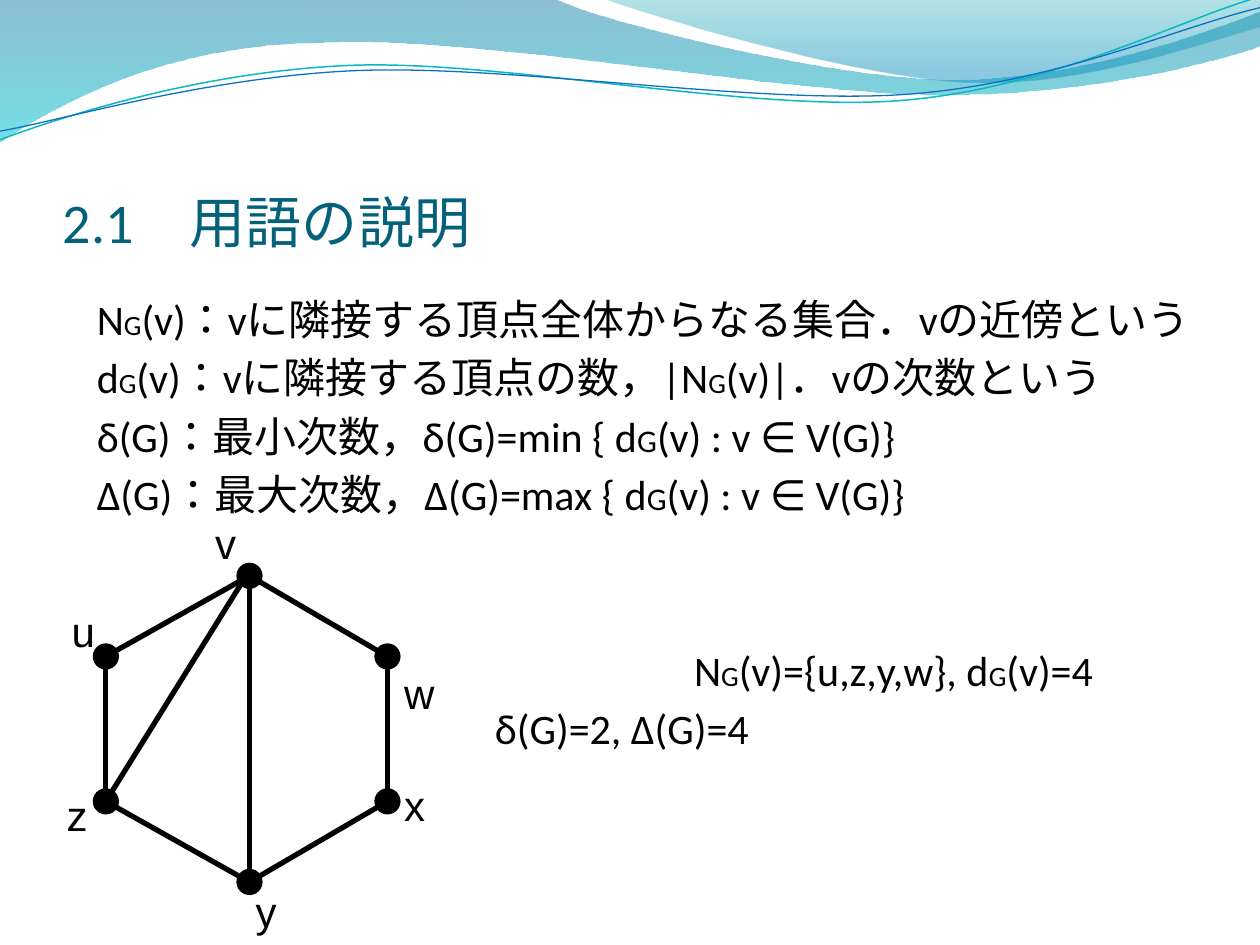
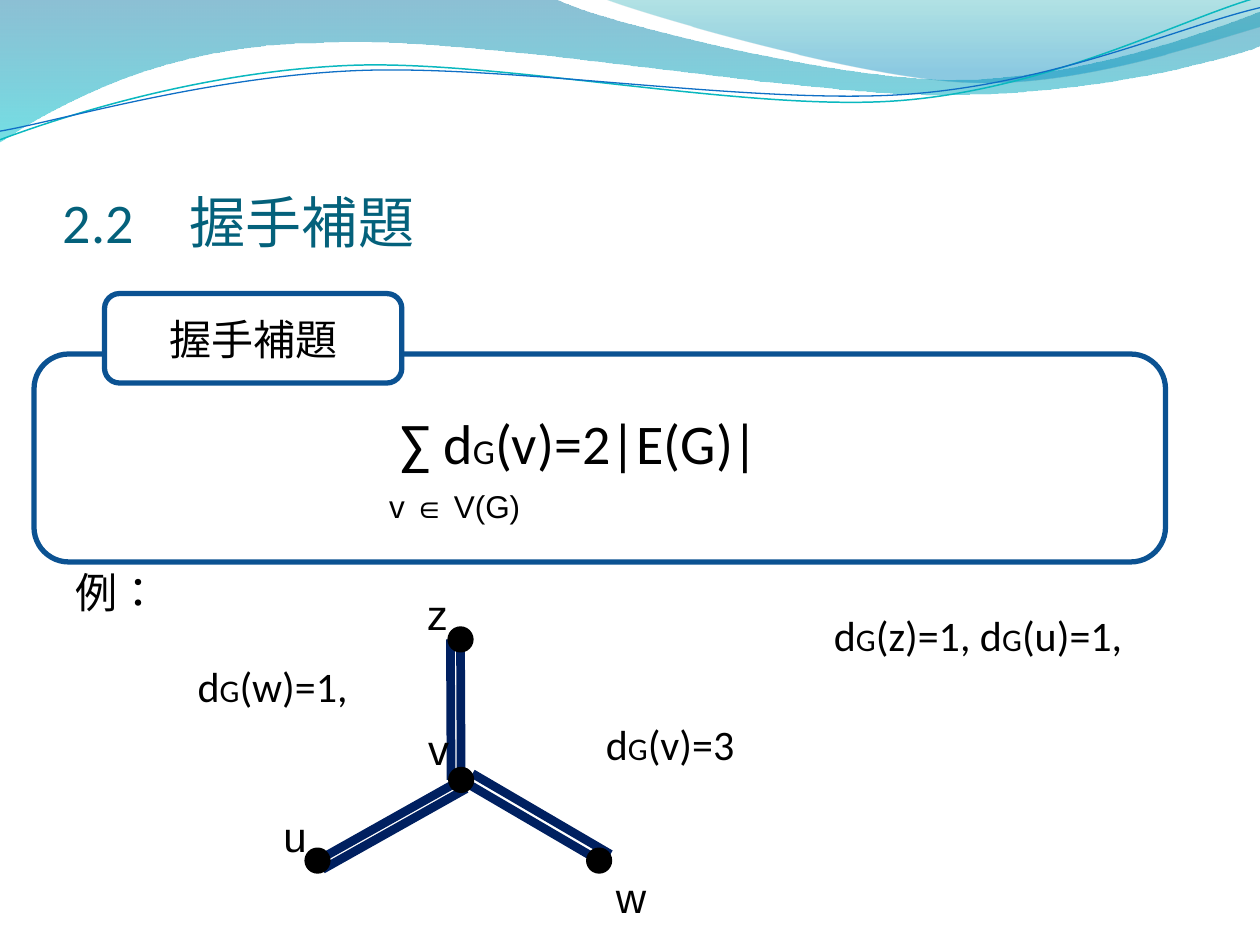
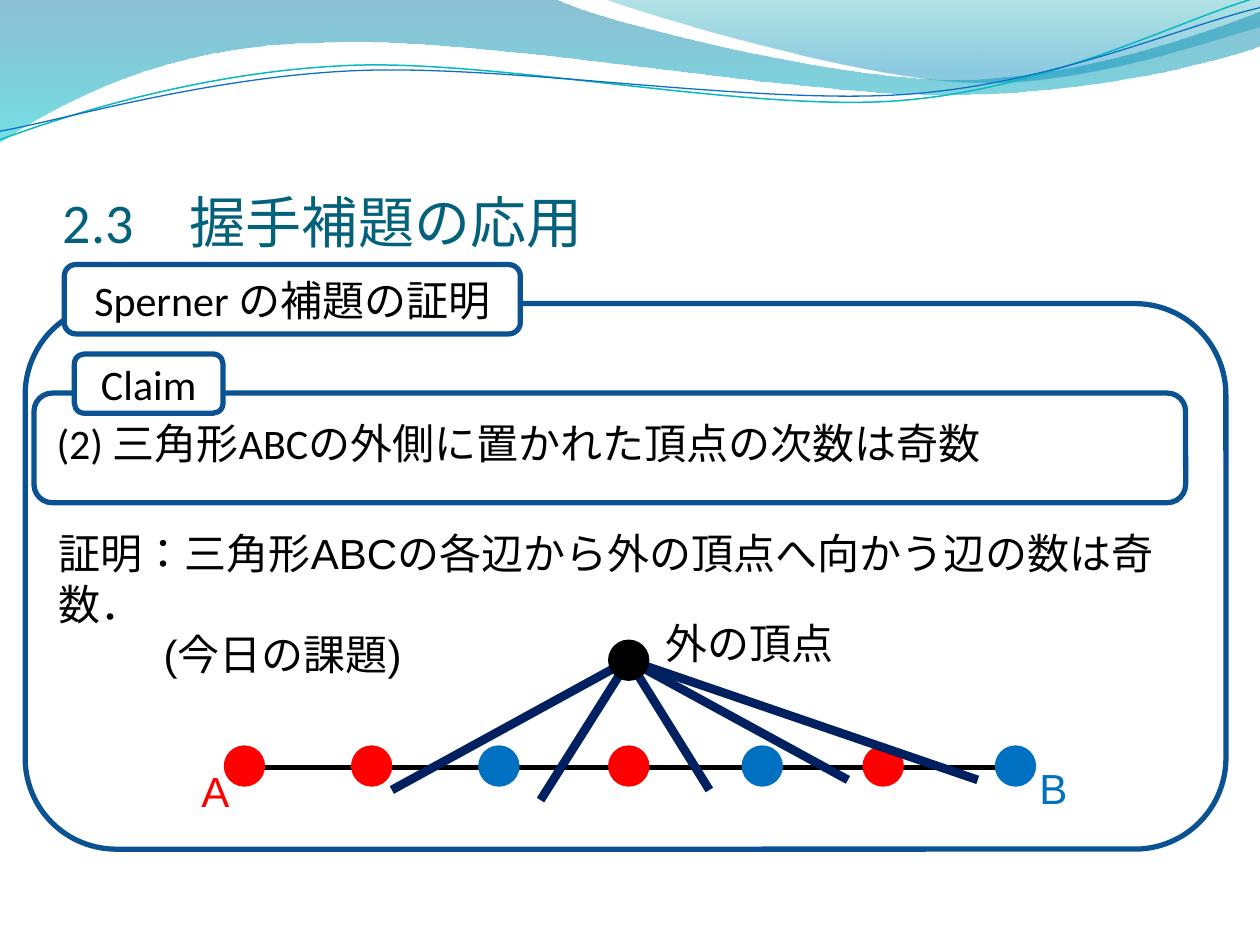
import pptx
import pptx.dml.color
import pptx.enum.lang
import pptx.enum.shapes
import pptx.enum.text
import pptx.oxml.ns
import pptx.util
from lxml import etree

COLORS = {
    "black": "000000", "white": "FFFFFF", "title": "04617B", "frame": "0B5292",
    "navy": "002060", "red": "FF0000", "blue": "0070C0", "teal": "0AB8BF",
    "azure": "0F6FC6", "sea": "0074A1", "aqua": "00C6CF", "jade": "00A1A9",
    "sky": "008BBF",
}
RGB = {name: pptx.dml.color.RGBColor.from_string(c) for name, c in COLORS.items()}
SHAPE = pptx.enum.shapes.MSO_SHAPE
ANCHOR = pptx.enum.text.MSO_ANCHOR
ALIGN = pptx.enum.text.PP_ALIGN
qn = pptx.oxml.ns.qn

prs = pptx.Presentation()
prs.slide_width, prs.slide_height = pptx.util.Inches(10), pptx.util.Inches(7.5)
CELL = prs.slide_width / 100  # the grid has 100 columns and 75 rows of square cells

# Header waves: start, then lines (2 numbers) and Bezier curves (6 numbers).
# Gradient stops are position, colour and opacity in percent.
WAVES = [
    dict(path=[(0, -0.1), (44, -0.1), (47.6, 1.7, 66.4, 6.3, 75.8, 6.3),
               (85.3, 6.3, 95.8, 2.6, 100, 0.9), (100.1, 3.6),
               (98.3, 4.4, 87, 7.6, 74.6, 7.5), (62.2, 7.5, 38.2, 2.8, 25.7, 3.4),
               (12.9, 3.5, 4.6, 8.3, -0.1, 11.3)],
         stops=[(0, "sea", 45), (1, "aqua", 55)]),
    dict(path=[(47.9, -0.1), (50.9, 1.1, 68.2, 6.2, 76.9, 6.5),
               (85.6, 6.9, 96.1, 3.2, 100, 2.1), (100, 0)],
         stops=[(0, "jade", 30), (0.8, "sky", 45)]),
    dict(path=[(-0.2, 8.74), (4.68, 7.17, 15.84, 4.09, 27.75, 4.15),
               (39.56, 4.21, 59.14, 9.34, 71.17, 9),
               (83.2, 8.67, 93.95, 3.56, 100.03, 2.16)],
         line=("teal", 0.85), rotation=357.3),
    dict(path=[(-0.16, 8.05), (4.58, 7.47, 16.43, 4.52, 28.34, 4.58),
               (40.35, 4.65, 59.58, 8.76, 71.6, 8.52),
               (83.52, 8.28, 93.73, 4.16, 100.2, 2.97)],
         line=("azure", 0.75), rotation=357.3),
]

# Text styles: size, size of ~subscripts~, font, colour
STYLES = {
    "title": (32, 32, "Calibri", "title"),
    "body": (24, 16, "Calibri", "black"),
    "body18": (24, 18, "Calibri", "black"),
    "formula": (32, 20, "Calibri", "black"),
    "tab": (24, 24, "Calibri", "black"),
    "index": (18, 18, "Arial", "black"),
    "label": (24, 24, "Arial", "black"),
    "red": (24, 24, "Arial", "red"),
    "blue": (24, 24, "Arial", "blue"),
}

HEXAGON = {"u": (8.4, 52.1), "v": (19.8, 45.7), "w": (30.75, 52.1),
           "x": (30.75, 63.6), "y": (19.8, 70), "z": (8.4, 63.6)}
STAR = {"u": (25.2, 68.3), "v": (36.6, 61.9), "w": (47.55, 68.3), "z": (36.55, 50.75)}
STAR_SHIFTS = {"zv": (-0.8, 0), "vw": (0.9, -0.5), "uv": (0.4, 0.7)}
APEX = (49.9, 52.4)
RAY_TIPS = [(31.1, 62.7), (42.9, 63.5), (56.3, 62.7), (67.3, 61.9), (77.6, 61.9)]
SIDE = [(19.4, "red"), (29.5, "red"), (39.6, "blue"), (49.9, "red"),
        (60.5, "blue"), (70.1, "red"), (80.6, "blue")]

# Frames and tabs: left, top, width, height (and words).
# Layers: edges with colour and width, then dots.
# Texts: left, top, width, height, top inset, and paragraphs of
# style, words, left margin, first-line indent, space before in points.
# Labels: style, left, top, words.
SLIDES = [
    dict(
        title="2.1　用語の説明",
        frames=[],
        layers=[dict(
            edges=[HEXAGON[a] + HEXAGON[b] for a, b in
                   ("uv", "vw", "uz", "zy", "yx", "wx", "vy")]
            + [(19.1, 46.4) + HEXAGON["z"]],
            color="black", width=3, size=1.8,
            dots=[(x, y, "black") for x, y in HEXAGON.values()])],
        tabs=[],
        texts=[(6.7, 22.8, 93.3, 48, 0.5, [
            ("body", "N~G~(v)：vに隣接する頂点全体からなる集合．vの近傍という", 0, 0, 0),
            ("body", "d~G~(v)：vに隣接する頂点の数，|N~G~(v)|．vの次数という", 0, 0, 4.5),
            ("body18", "δ(G)：最小次数，δ(G)=min { d~G~(v) : v ∈ V(G)}", 0, 0, 4.5),
            ("body18", "Δ(G)：最大次数，Δ(G)=max { d~G~(v) : v ∈ V(G)}", 0, 0, 4.5),
            ("body", "N~G~(v)={u,z,y,w}, d~G~(v)=4", 47.4, 0, 72),
            ("body", "δ(G)=2, Δ(G)=4", 31.6, 0, 4.5)])],
        labels=[("label", 4.7, 47.6, "u"), ("label", 16.1, 40.6, "v"),
                ("label", 31.1, 52.5, "w"), ("label", 31.1, 61.4, "x"),
                ("label", 19.3, 69.8, "y"), ("label", 4.3, 62.2, "z")]),
    dict(
        title="2.2　握手補題",
        frames=[(2.7, 28.1, 89.8, 16.5)],
        layers=[dict(
            edges=[(STAR[a][0] + dx, STAR[a][1] + dy, STAR[b][0] + dx, STAR[b][1] + dy)
                   for (a, b), shift in STAR_SHIFTS.items() for dx, dy in ((0, 0), shift)],
            color="navy", width=5, size=1.8,
            dots=[(x, y, "black") for x, y in STAR.values()])],
        tabs=[(8.3, 23.3, 23.6, 7.1, "握手補題")],
        texts=[
            (5, 21.2, 95, 48, 23.8, [("body", "例：", 0, 0, 0)]),
            (6.7, 22.8, 93.3, 48, 9.65, [
                ("formula", "∑ d~G~(v)=2|E(G)|", 24.1, 0, 0),
                ("body18", "d~G~(z)=1, d~G~(u)=1, d~G~(w)=1,", 8, 50.5, 76.5),
                ("body18", "d~G~(v)=3", 40.4, 0, 4.5)]),
            (29.9, 38.2, 12.6, 4, 0.5, [("index", "v ∈ V(G)", 0, 0, 0)])],
        labels=[("label", 21.5, 63.8, "u"), ("label", 33, 56.9, "v"),
                ("label", 47.9, 68.7, "w"), ("label", 32.9, 46.2, "z")]),
    dict(
        title="2.3　握手補題の応用",
        frames=[(2, 24.1, 95.3, 43.3), (2.7, 31.2, 91.4, 8.7)],
        layers=[
            dict(edges=[(19.3, 60.9, 80.7, 60.9)], color="black", width=3, size=3,
                 dots=[(x, 60.8, color) for x, color in SIDE]),
            dict(edges=[APEX + tip for tip in RAY_TIPS], color="navy", width=5, size=3,
                 dots=[APEX + ("black",)]),
        ],
        tabs=[(5.9, 28.1, 11.8, 4.7, "Claim"), (5.1, 21, 36.2, 5.5, "Sperner の補題の証明")],
        texts=[
            (3.5, 23.3, 94.5, 48, 9.8,
             [("body", "(2) 三角形ABCの外側に置かれた頂点の次数は奇数", 0, 0, 0)]),
            (3.7, 41.4, 92, 13, 0.5, [
                ("label", "証明：三角形ABCの各辺から外の頂点へ向かう辺の数は奇数．", 0, 0, 0),
                ("label", "(今日の課題)", 8.3, 0, 0)]),
            (51.8, 48.5, 15.5, 5.1, 0.5, [("label", "外の頂点", 0, 0, 0)])],
        labels=[("red", 15, 60.3, "A"), ("blue", 81.5, 60, "B")]),
]


def cells(*values):
    """Turn grid cells into EMU."""
    return [round(v * CELL) for v in values]


def paint(sp, line=None, width=1, fill=None):
    """Set line and fill, and switch the theme's shadow off."""
    if line:
        sp.line.color.rgb = RGB[line]
        sp.line.width = pptx.util.Pt(width)
    else:
        sp.line.fill.background()
    if fill:
        sp.fill.solid()
        sp.fill.fore_color.rgb = RGB[fill]
    elif hasattr(sp, "fill"):
        sp.fill.background()
    etree.SubElement(sp._element.spPr, qn("a:effectLst"))


blank = prs.slide_layouts[6]
slides = [prs.slides.add_slide(blank) for page in SLIDES]

# The waves are drawn as polygons, turned into curves, and moved to the layout.
for wave in WAVES:
    points = [cells(*step[i:i + 2]) for step in wave["path"] for i in range(0, len(step), 2)]
    fb = slides[0].shapes.build_freeform(*points[0], scale=1.0)
    fb.add_line_segments(points[1:], close="stops" in wave)
    sp = fb.convert_to_shape()
    segments = iter(list(sp._element.iter(qn("a:lnTo"))))
    for step in wave["path"][1:]:
        first = next(segments)
        if len(step) == 6:
            first.tag = qn("a:cubicBezTo")
            for other in (next(segments), next(segments)):
                first.append(other[0])
                other.getparent().remove(other)
    paint(sp, *wave.get("line", ()))
    sp.rotation = wave.get("rotation", 0)
    if "stops" in wave:
        sp.fill.gradient()
        sp.fill.gradient_angle = 270
        for stop, (position, color, opacity) in zip(sp.fill.gradient_stops, wave["stops"]):
            stop.position = position
            stop.color.rgb = RGB[color]
            clr = stop._gs.find(qn("a:srgbClr"))
            etree.SubElement(clr, qn("a:alpha"), val=str(opacity * 1000))
    blank.shapes._spTree.append(sp._element)

for s, page in zip(slides, SLIDES):
    for frame in page["frames"]:
        paint(s.shapes.add_shape(SHAPE.ROUNDED_RECTANGLE, *cells(*frame)), "frame", 3)

    for layer in page["layers"]:
        for edge in layer["edges"]:
            sp = s.shapes.add_connector(pptx.enum.shapes.MSO_CONNECTOR.STRAIGHT, *cells(*edge))
            paint(sp, layer["color"], layer["width"])
        size = layer["size"]
        for x, y, color in layer["dots"]:
            sp = s.shapes.add_shape(SHAPE.OVAL, *cells(x - size / 2, y - size / 2, size, size))
            paint(sp, color, 2, color)

    boxes = [(5, 7.7, 90, 12.5, 0.5, [("title", page["title"], 0, 0, 0)])]
    boxes += [(x, y, w, h, 0.5, [("tab", words, 0, 0, 0)]) for x, y, w, h, words in page["tabs"]]
    boxes += page["texts"]
    boxes += [(x, y, 4.5, 5.1, 0.5, [(style, words, 0, 0, 0)])
              for style, x, y, words in page["labels"]]
    for x, y, w, h, inset, paragraphs in boxes:
        kind = paragraphs[0][0]
        if kind == "tab":
            sp = s.shapes.add_shape(SHAPE.ROUNDED_RECTANGLE, *cells(x, y, w, h))
            paint(sp, "frame", 3, "white")
        else:
            sp = s.shapes.add_textbox(*cells(x, y, w, h))
        tf = sp.text_frame
        tf.word_wrap = True
        tf.margin_top, = cells(inset)
        tf.vertical_anchor = {"title": ANCHOR.BOTTOM, "tab": ANCHOR.MIDDLE}.get(kind, ANCHOR.TOP)
        if kind == "title":
            tf.margin_left = tf.margin_right = tf.margin_bottom = 0
        for i, (style, words, left, indent, before) in enumerate(paragraphs):
            points, sub_points, font, color = STYLES[style]
            p = tf.add_paragraph() if i else tf.paragraphs[0]
            p.alignment = ALIGN.CENTER if kind == "tab" else ALIGN.LEFT
            p.space_before = pptx.util.Pt(before)
            for name, value in zip(("marL", "indent"), cells(left, indent)):
                p._p.get_or_add_pPr().set(name, str(value))
            for j, part in enumerate(words.split("~")):
                r = p.add_run()
                r.text = part
                r.font.size = pptx.util.Pt(sub_points if j % 2 else points)
                r.font.name = font
                r.font.color.rgb = RGB[color]
                r.font.language_id = pptx.enum.lang.MSO_LANGUAGE_ID.JAPANESE

prs.save("out.pptx")
